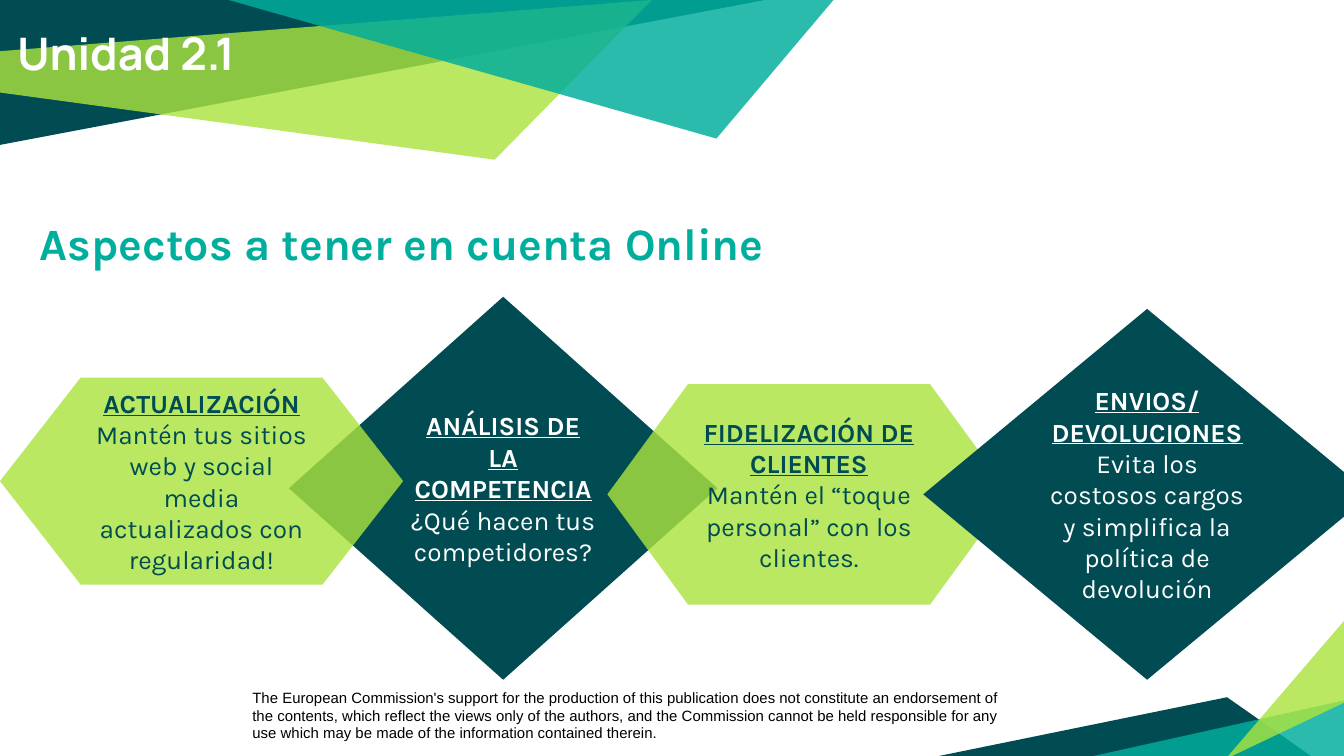
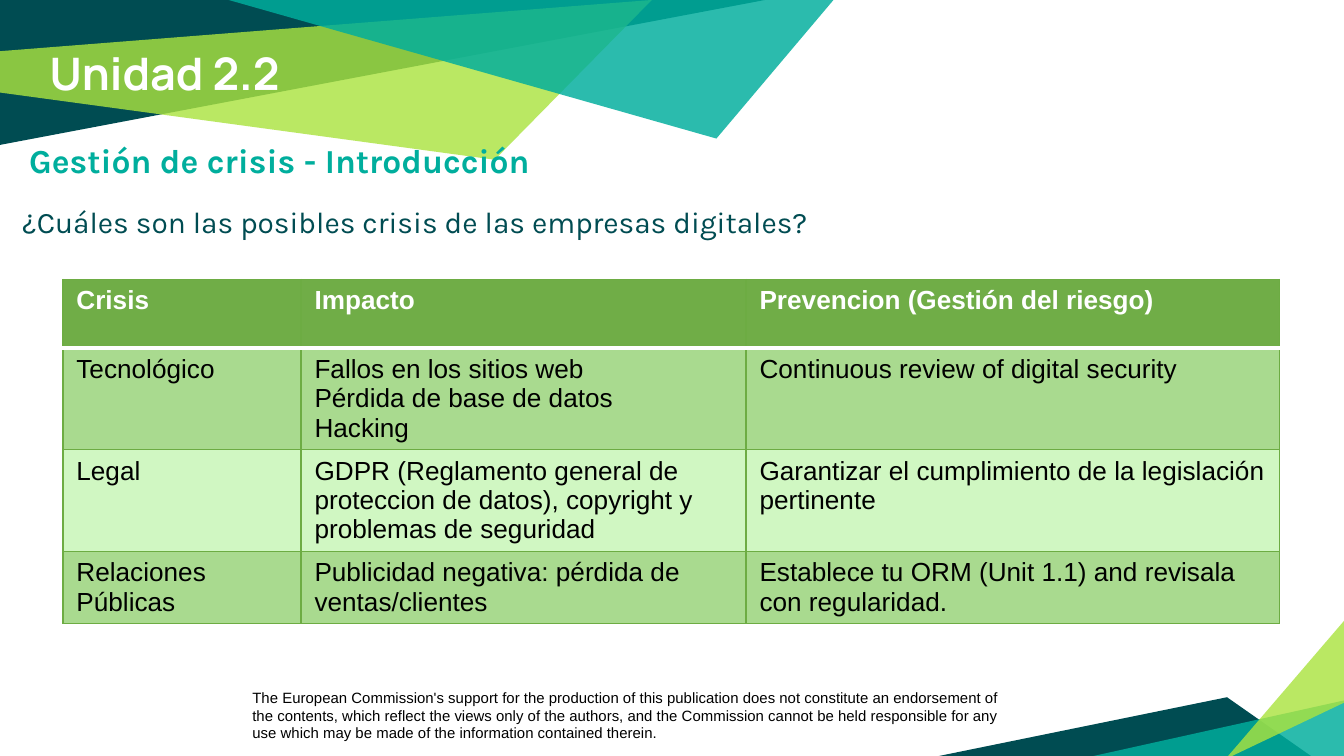
from dataclasses import dataclass
from typing import NamedTuple

from lxml.etree import SubElement
from pptx import Presentation
from pptx.dml.color import RGBColor
from pptx.enum.shapes import MSO_SHAPE
from pptx.enum.text import MSO_ANCHOR, MSO_AUTO_SIZE, PP_ALIGN
from pptx.oxml.ns import qn
from pptx.util import Cm, Pt

COLORS = {
    "dark": "004C52", "lime": "ABE33F", "teal": "00AE9D",
    "white": "FFFFFF", "black": "000000",
    "header": "70AD47", "border": "6DAC43",
    "row_strong": "A9DA8F", "row_soft": "D0F7C2",
}
INSET = 0.25
DISCLAIMER = (
    "The European Commission's support for the production of this publication "
    "does not constitute an endorsement of the contents, which reflect the views "
    "only of the authors, and the Commission cannot be held responsible for any "
    "use which may be made of the information contained therein."
)


class Area(NamedTuple):
    left: float
    top: float
    width: float
    height: float

    def lengths(self) -> list:
        return [Cm(value) for value in self]


class Style(NamedTuple):
    size: float
    name: str
    color: str
    bold: bool = False
    underline: bool = False


class Band(NamedTuple):
    color: str
    opacity: int
    points: list


@dataclass
class Aspect:
    shape: MSO_SHAPE
    area: Area
    fill: str
    opacity: int
    text_color: str
    headings: list
    detail: str


TITLE = Style(24, "Manrope", "white", True)
FOOTER = Style(8, "Arial", "black")

# Decoration shared by every page, back to front
BANDS = [
    Band("dark", 100, [(0, 0), (0, 2.74), (14.46, 0)]),
    Band("lime", 81, [(-0.02, 0.97), (0, 1.75), (9.35, 3.02), (12.32, 0)]),
    Band("dark", 100, [(17.7, 14.3), (24.79, 14.3), (23.19, 13.18)]),
    Band("teal", 83, [(25.45, 13.23), (25.45, 14.35), (20.4, 14.35)]),
    Band("lime", 81, [(25.45, 13.26), (25.45, 11.68), (23.16, 14.35)]),
    Band("teal", 83, [(4.32, 0), (13.54, 2.62), (15.77, -0.02), (15.47, 0)]),
]

ASPECTS = [
    Aspect(MSO_SHAPE.DIAMOND, Area(5.46, 5.61, 8.1, 7.24), "dark", 100, "white",
           ["ANÁLISIS DE LA COMPETENCIA"], "¿Qué hacen tus competidores?"),
    Aspect(MSO_SHAPE.FLOWCHART_PREPARATION, Area(0, 7.14, 7.62, 3.91), "lime", 81, "dark",
           ["ACTUALIZACIÓN"],
           "Mantén tus sitios web y social media actualizados con regularidad!"),
    Aspect(MSO_SHAPE.FLOWCHART_PREPARATION, Area(11.48, 7.26, 7.62, 4.17), "lime", 81, "dark",
           ["FIDELIZACIÓN DE CLIENTES"], "Mantén el “toque personal” con los clientes."),
    Aspect(MSO_SHAPE.DIAMOND, Area(17.45, 5.84, 8.46, 7.01), "dark", 100, "white",
           ["ENVIOS/", "DEVOLUCIONES"],
           "Evita los costosos cargos y simplifica la política de devolución"),
]

CRISES = [
    ["Crisis", "Impacto", "Prevencion (Gestión del riesgo)"],
    ["Tecnológico", "Fallos en los sitios web\nPérdida de base de datos\nHacking",
     "Continuous review of digital security"],
    ["Legal",
     "GDPR (Reglamento general de proteccion de datos), copyright y problemas de seguridad",
     "Garantizar el cumplimiento de la legislación pertinente"],
    ["Relaciones Públicas", "Publicidad negativa: pérdida de ventas/clientes",
     "Establece tu ORM (Unit 1.1) and revisala con regularidad."],
]
COLUMN_WIDTHS = [4.5, 8.41, 10.08]
ROW_HEIGHTS = [1.3, 1.83, 1.3, 1.3]


def rgb(color: str) -> RGBColor:
    return RGBColor.from_string(COLORS[color])


def set_attributes(target, values: dict) -> None:
    for name, value in values.items():
        setattr(target, name, value)


def format_font(font, style: Style) -> None:
    set_attributes(font, {
        "size": Pt(style.size), "name": style.name,
        "bold": style.bold, "underline": style.underline,
    })
    font.color.rgb = rgb(style.color)


def format_frame(frame, left: float = INSET, top: float = INSET,
                 anchor: MSO_ANCHOR = MSO_ANCHOR.TOP) -> None:
    set_attributes(frame, {
        "word_wrap": True, "auto_size": MSO_AUTO_SIZE.NONE, "vertical_anchor": anchor,
        "margin_left": Cm(left), "margin_top": Cm(top),
        "margin_right": Cm(INSET), "margin_bottom": Cm(INSET),
    })


def write(para, text: str, style: Style, align: PP_ALIGN = PP_ALIGN.LEFT) -> None:
    set_attributes(para, {"alignment": align, "space_before": Pt(0)})
    span = para.add_run()
    span.text = text
    format_font(span.font, style)


def paint(shape, color: str, opacity: int) -> None:
    shape.shadow.inherit = False
    shape.fill.solid()
    shape.fill.fore_color.rgb = rgb(color)
    shape.line.fill.background()
    if opacity < 100:
        fill_color = shape.element.spPr.find(qn("a:solidFill"))[0]
        SubElement(fill_color, qn("a:alpha"), val=str(opacity * 1000))


def fill_placeholder(box, area: Area, text: str, style: Style, **margins: float) -> None:
    set_attributes(box, dict(zip(("left", "top", "width", "height"), area.lengths())))
    format_frame(box.text_frame, **margins)
    para = box.text_frame.paragraphs[0]
    properties = para._p.get_or_add_pPr()
    properties.set("marL", "0")
    properties.set("indent", "0")
    SubElement(properties, qn("a:buNone"))
    write(para, text, style)


def add_text(page, area: Area, text: str, style: Style, **margins: float):
    box = page.shapes.add_textbox(*area.lengths())
    format_frame(box.text_frame, **margins)
    write(box.text_frame.paragraphs[0], text, style)
    return box


def add_band(page, band: Band):
    start, *others = [(Cm(x), Cm(y)) for x, y in band.points]
    builder = page.shapes.build_freeform(*start)
    builder.add_line_segments(others, close=True)
    shape = builder.convert_to_shape()
    paint(shape, band.color, band.opacity)
    return shape


def decorate_layout(page) -> None:
    """Build the shared parts on a page and move them to its layout."""
    footer = add_text(page, Area(4.52, 12.88, 14.71, 1.27), DISCLAIMER, FOOTER, top=0.13)
    parts = [footer] + [add_band(page, band) for band in BANDS]
    tree = page.slide_layout.shapes.element
    for number, part in enumerate(parts):
        part.element.nvSpPr.cNvPr.set("id", str(100 + number))
        tree.insert(2 + number, part.element)


def add_aspect(page, aspect: Aspect) -> None:
    shape = page.shapes.add_shape(aspect.shape, *aspect.area.lengths())
    paint(shape, aspect.fill, aspect.opacity)
    frame = shape.text_frame
    format_frame(frame, anchor=MSO_ANCHOR.MIDDLE)
    heading = Style(14, "Karla", aspect.text_color, True, True)
    detail = Style(14, "Karla", aspect.text_color)
    lines = [(text, heading) for text in aspect.headings] + [(aspect.detail, detail)]
    for number, (text, style) in enumerate(lines):
        para = frame.add_paragraph() if number else frame.paragraphs[0]
        write(para, text, style, PP_ALIGN.CENTER)


def add_border(cell, side: str, color: str, width: float) -> None:
    line = SubElement(cell._tc.get_or_add_tcPr(), qn(f"a:ln{side}"), w=str(Pt(width)))
    fill = SubElement(line, qn("a:solidFill"))
    SubElement(fill, qn("a:srgbClr"), val=COLORS[color])


def add_crisis_table(page) -> None:
    area = Area(1.19, 5.28, sum(COLUMN_WIDTHS), sum(ROW_HEIGHTS))
    table = page.shapes.add_table(len(CRISES), len(COLUMN_WIDTHS), *area.lengths()).table
    for column, width in zip(table.columns, COLUMN_WIDTHS):
        column.width = Cm(width)
    for number, (row, height) in enumerate(zip(table.rows, ROW_HEIGHTS)):
        row.height = Cm(height)
        is_header = number == 0
        fill = "header" if is_header else ("row_soft", "row_strong")[number % 2]
        style = Style(14, "Arial", "white" if is_header else "black", is_header)
        white_side = {0: "B", 1: "T"}.get(number)
        for cell, text in zip(row.cells, CRISES[number]):
            for side in "LRTB":
                is_white = side == white_side
                add_border(cell, side, "white" if is_white else "border",
                           2 if is_white else 0.75)
            cell.fill.solid()
            cell.fill.fore_color.rgb = rgb(fill)
            cell.text = text
            for para in cell.text_frame.paragraphs:
                for span in para.runs:
                    format_font(span.font, style)


def build_aspects_page(page) -> None:
    title, body = page.placeholders
    fill_placeholder(body, Area(-0.15, 2.57, 25.4, 7.67), "Aspectos a tener en cuenta Online",
                     Style(24, "Karla", "teal", True), left=0.9, top=1.5)
    fill_placeholder(title, Area(0.08, 0.23, 20.47, 1.52), "Unidad 2.1", TITLE)
    for aspect in ASPECTS:
        add_aspect(page, aspect)


def build_crisis_page(page) -> None:
    title, body = page.placeholders
    fill_placeholder(body, Area(0.3, 2.39, 24.64, 9.5), "Gestión de crisis - Introducción",
                     Style(18, "Karla", "teal", True))
    fill_placeholder(title, Area(0.69, 0.61, 20.47, 1.52), "Unidad 2.2", TITLE)
    add_text(page, Area(0.05, 3.61, 24.64, 5.74),
             "¿Cuáles son las posibles crisis de las empresas digitales?",
             Style(16, "Karla", "dark"), left=0.37)
    add_crisis_table(page)


def main() -> None:
    deck = Presentation()
    deck.slide_width, deck.slide_height = Cm(25.4), Cm(14.29)
    layout = deck.slide_layouts[1]
    aspects_page = deck.slides.add_slide(layout)
    decorate_layout(aspects_page)
    build_aspects_page(aspects_page)
    build_crisis_page(deck.slides.add_slide(layout))
    deck.save("out.pptx")


if __name__ == "__main__":
    main()
